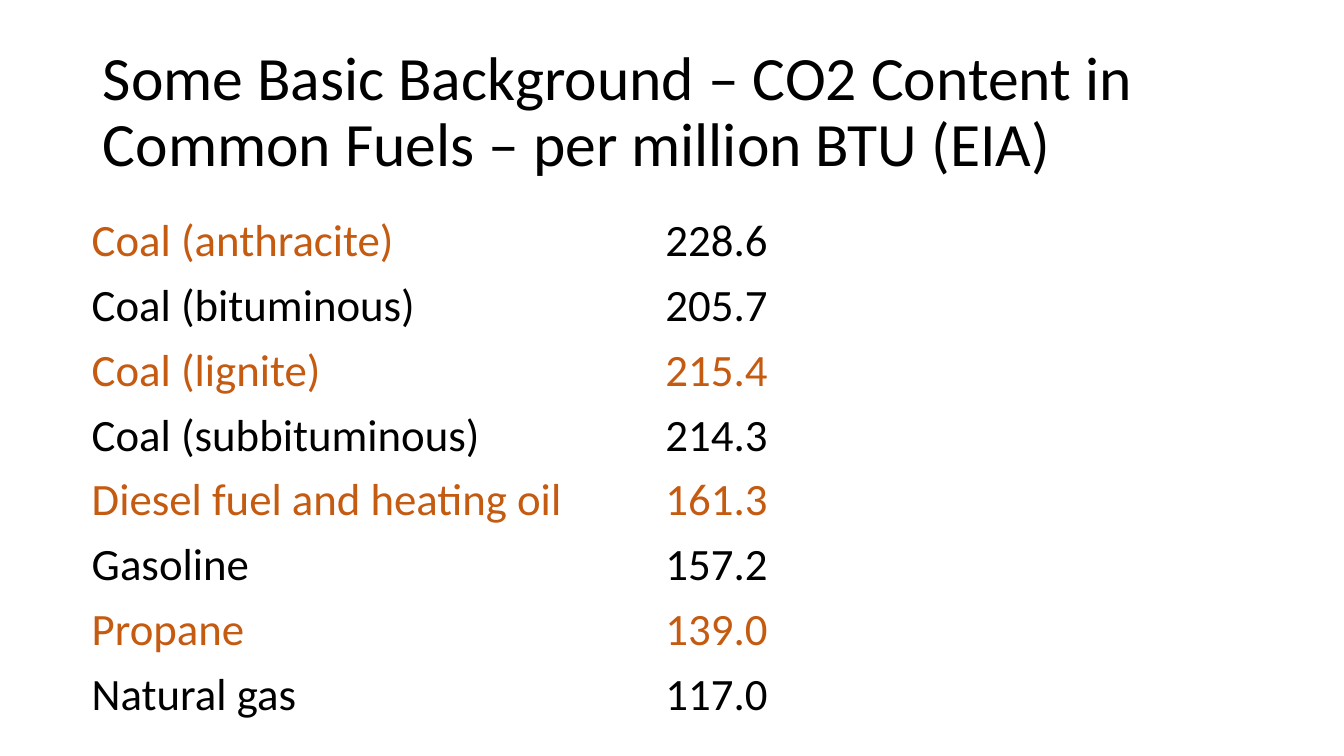
from pptx import Presentation
from pptx.dml.color import RGBColor as RGB
from pptx.enum.text import MSO_ANCHOR as Anchor, PP_ALIGN as Align
from pptx.util import Inches, Pt

BLACK = RGB(0x00, 0x00, 0x00)
ORANGE = RGB(0xC5, 0x5A, 0x11)

TITLE = "Some Basic Background – CO2 Content in Common Fuels – per million BTU (EIA)"
FUELS = [
    ("Coal (anthracite)", "228.6", ORANGE, BLACK),
    ("Coal (bituminous)", "205.7", BLACK, BLACK),
    ("Coal (lignite)", "215.4", ORANGE, ORANGE),
    ("Coal (subbituminous)", "214.3", BLACK, BLACK),
    ("Diesel fuel and heating oil", "161.3", ORANGE, ORANGE),
    ("Gasoline", "157.2", BLACK, BLACK),
    ("Propane", "139.0", ORANGE, ORANGE),
    ("Natural gas", "117.0", BLACK, BLACK),
]


class Page:
    """Holds the text style and the current slide."""

    def __init__(self, slide, face="Calibri"):
        self.slide = slide
        self.face = face

    def label(self, frame, text, size, color):
        frame.text = text
        frame.word_wrap = True
        para = frame.paragraphs[0]
        para.alignment = Align.LEFT
        para.font.name = self.face
        para.font.size = Pt(size)
        para.font.color.rgb = color
        return para

    def title(self, text, left, top, width, height):
        shape = self.slide.shapes.title
        shape.left, shape.top = Inches(left), Inches(top)
        shape.width, shape.height = Inches(width), Inches(height)
        shape.text_frame.vertical_anchor = Anchor.MIDDLE
        self.label(shape.text_frame, text, 44, BLACK).line_spacing = 0.9

    def table(self, fuels, left, top, width, height):
        frame = self.slide.shapes.add_table(
            len(fuels), 2, Inches(left), Inches(top), Inches(width), Inches(height))
        table = frame.table
        table.first_row = table.horz_banding = False
        for row, (fuel, value, *colors) in zip(table.rows, fuels):
            for cell, text, color in zip(row.cells, (fuel, value), colors):
                cell.fill.background()
                cell.vertical_anchor = Anchor.MIDDLE
                self.label(cell.text_frame, text, 32, color)


def main():
    deck = Presentation()
    deck.slide_width, deck.slide_height = Inches(13.33), Inches(7.5)
    page = Page(deck.slides.add_slide(deck.slide_layouts[5]))
    page.title(TITLE, 0.92, 0.4, 11.5, 1.45)
    page.table(FUELS, 0.81, 2.07, 11.38, 4.64)
    deck.save("out.pptx")


if __name__ == "__main__":
    main()
